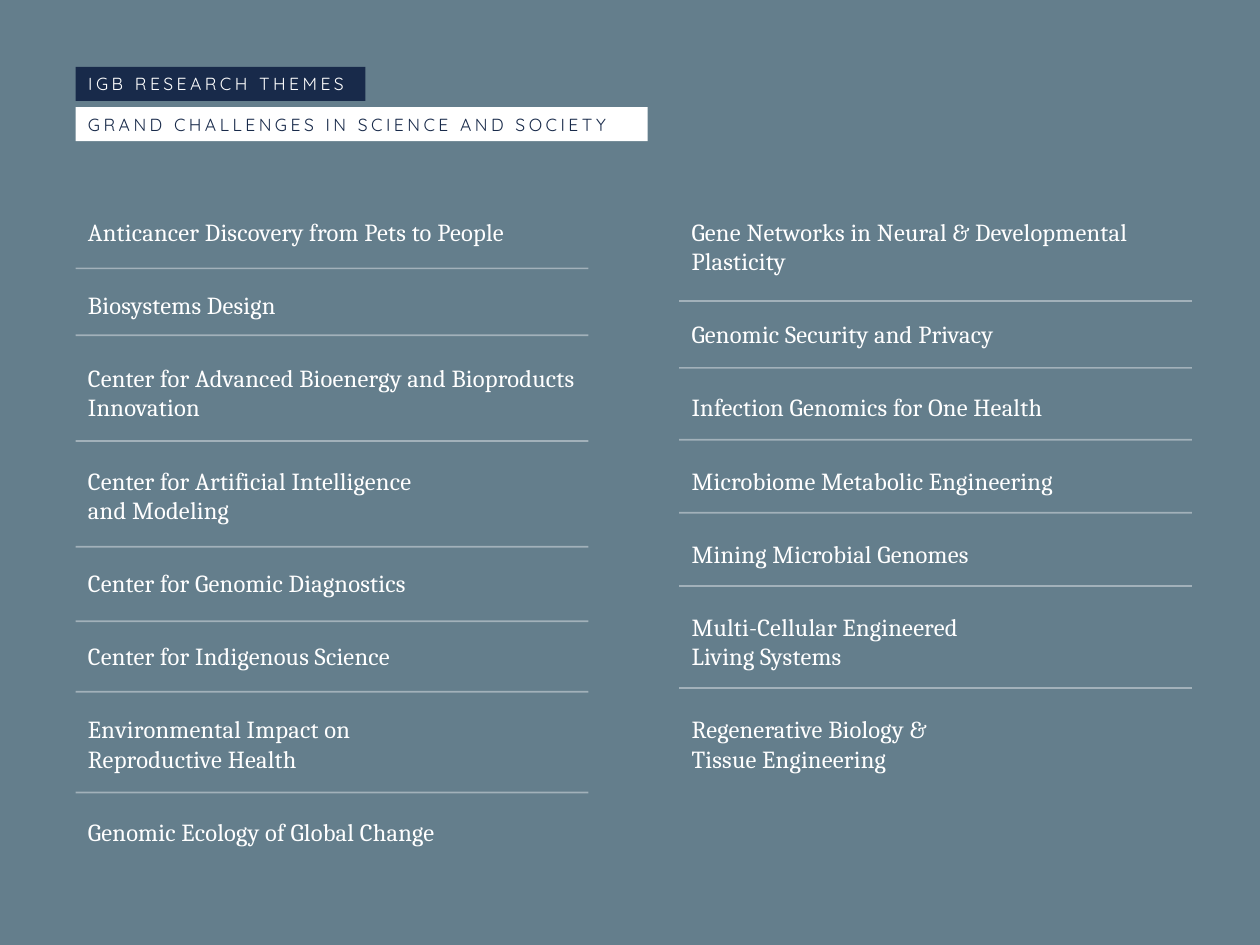
from lxml.etree import SubElement
from pptx import Presentation
from pptx.dml.color import RGBColor
from pptx.enum.shapes import MSO_CONNECTOR, MSO_SHAPE
from pptx.enum.text import MSO_ANCHOR, MSO_AUTO_SIZE, PP_ALIGN
from pptx.oxml.ns import qn
from pptx.util import Inches, Pt

SLATE = RGBColor(0x64, 0x7E, 0x8C)
NAVY = RGBColor(0x18, 0x2A, 0x4A)
WHITE = RGBColor(0xFF, 0xFF, 0xFF)

LEFT, LIST_TOP, RULE_W = 0.6, 1.67, 4.07
LABEL_H, LABEL_PITCH, LABEL_TOP = 0.27, 0.32, 0.53
LABEL_FONT = {"name": "Quicksand", "size": Pt(10), "bold": False}
LIST_FONT = {"name": "Cambria", "size": Pt(14)}

COLUMNS = [
    (LEFT, 4.07, 5.13,
     ["Anticancer Discovery from Pets to People",
      "Biosystems Design",
      "Center for Advanced Bioenergy and Bioproducts Innovation",
      "Center for Artificial Intelligence\vand Modeling",
      "Center for Genomic Diagnostics",
      "Center for Indigenous Science",
      "Environmental Impact on\vReproductive Health",
      "Genomic Ecology of Global Change"],
     [2.13, 2.66, 3.5, 4.34, 4.93, 5.49, 6.29]),
    (5.39, 3.75, 4.54,
     ["Gene Networks in Neural & Developmental\vPlasticity".replace("\v", " "),
      "Genomic Security and Privacy",
      "Infection Genomics for One Health",
      "Microbiome Metabolic Engineering",
      "Mining Microbial Genomes",
      "Multi-Cellular Engineered\vLiving Systems",
      "Regenerative Biology &\vTissue Engineering"],
     [2.39, 2.92, 3.49, 4.07, 4.65, 5.46]),
]


def write(p, text, fmt, color, spacing):
    """Fill a paragraph and format its runs, with letter spacing in points."""
    p.text = text
    p.alignment = PP_ALIGN.LEFT
    for r in p.runs:
        for key, value in fmt.items():
            setattr(r.font, key, value)
        r.font.color.rgb = color
        r.font._element.set("spc", str(round(spacing * 100)))


def style_label(sp, row, width, text, fill, color):
    """Place a shape as a filled heading label on the given row."""
    box = {"left": LEFT, "top": LABEL_TOP + row * LABEL_PITCH,
           "width": width, "height": LABEL_H}
    for key, value in box.items():
        setattr(sp, key, Inches(value))
    sp.fill.solid()
    sp.fill.fore_color.rgb = fill
    sp.line.fill.background()
    tf = sp.text_frame
    frame = {"word_wrap": True, "auto_size": MSO_AUTO_SIZE.NONE,
             "vertical_anchor": MSO_ANCHOR.MIDDLE}
    for key, value in frame.items():
        setattr(tf, key, value)
    write(tf.paragraphs[0], text, LABEL_FONT, color, 2)


def add_list(s, left, width, height, themes):
    """Add one column of research themes."""
    sp = s.shapes.add_textbox(*map(Inches, (left, LIST_TOP, width, height)))
    tf = sp.text_frame
    tf.word_wrap = True
    for i, theme in enumerate(themes):
        p = tf.add_paragraph() if i else tf.paragraphs[0]
        p.space_before = Pt(25 if i else 0)
        write(p, theme, LIST_FONT, WHITE, 0.1)


def add_rule(s, left, y):
    """Add a translucent white divider without a shadow."""
    ends = map(Inches, (left, y, left + RULE_W, y))
    sp = s.shapes.add_connector(MSO_CONNECTOR.STRAIGHT, *ends)
    sp.line.width = Pt(1)
    sp.line.color.rgb = WHITE
    spPr = sp._element.spPr
    SubElement(next(spPr.iter(qn("a:srgbClr"))), qn("a:alpha"), val="40000")
    SubElement(spPr, qn("a:effectLst"))


def main():
    """Build the research themes slide."""
    prs = Presentation()
    prs.slide_width, prs.slide_height = Inches(10), Inches(7.5)
    s = prs.slides.add_slide(prs.slide_layouts[5])
    s.background.fill.solid()
    s.background.fill.fore_color.rgb = SLATE

    style_label(s.shapes.title, 0, 2.3, "IGB RESEARCH THEMES", NAVY, WHITE)
    sp = s.shapes.add_shape(MSO_SHAPE.RECTANGLE, 0, 0, 0, 0)
    sp.shadow.inherit = False
    style_label(sp, 1, 4.54, "GRAND CHALLENGES IN SCIENCE AND SOCIETY", WHITE, NAVY)

    for left, width, height, themes, rules in COLUMNS:
        add_list(s, left, width, height, themes)
        for y in rules:
            add_rule(s, left, y)
    prs.save("out.pptx")


if __name__ == "__main__":
    main()
